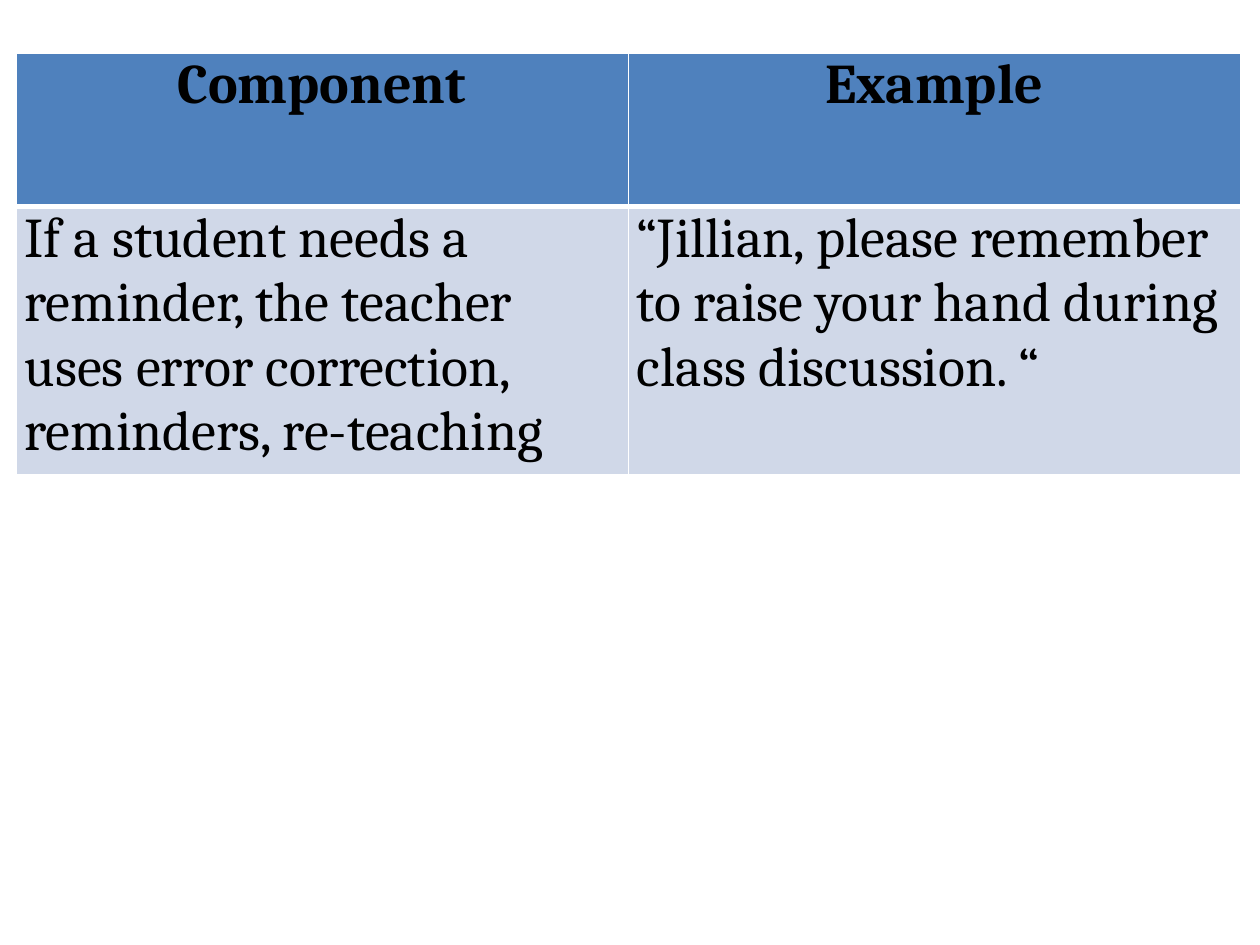
import dataclasses

import lxml.etree
import pptx
import pptx.dml.color
import pptx.enum.text
import pptx.oxml.ns
import pptx.table
import pptx.util

Pt = pptx.util.Pt
Align = pptx.enum.text.PP_ALIGN
SIDES = ("L", "R", "T", "B")
MARGINS = {
    "margin_left": Pt(5),
    "margin_right": Pt(5),
    "margin_top": Pt(0),
    "margin_bottom": Pt(0),
}


@dataclasses.dataclass(frozen=True)
class Row:
    texts: tuple[str, ...]
    height: float
    fill: str
    bold: bool
    align: Align
    edges: tuple[float, ...]  # widths in the order of SIDES


ROWS = (
    Row(("Component", "Example"), 87.6, "4F81BD", True, Align.CENTER, (1, 1, 1, 3)),
    Row(
        (
            "If a student needs a reminder, the teacher uses error correction, "
            "reminders, re-teaching",
            "“Jillian, please remember to raise your hand during class discussion. “",
        ),
        153.4, "D0D8E8", False, Align.LEFT, (1, 1, 1, 1),
    ),
)
WIDTH = 350


def color(code: str) -> pptx.dml.color.RGBColor:
    return pptx.dml.color.RGBColor.from_string(code)


def apply(target: object, values: dict) -> None:
    for name, value in values.items():
        setattr(target, name, value)


def add_edge(cell: pptx.table._Cell, side: str, width: float, code: str) -> None:
    qn = pptx.oxml.ns.qn
    props = cell._tc.get_or_add_tcPr()
    line = lxml.etree.SubElement(props, qn(f"a:ln{side}"), w=str(Pt(width)))
    fill = lxml.etree.SubElement(line, qn("a:solidFill"))
    lxml.etree.SubElement(fill, qn("a:srgbClr"), val=code)


def fill_cell(cell: pptx.table._Cell, text: str, row: Row) -> None:
    apply(cell, MARGINS)
    # The schema wants the edges ahead of the fill.
    for side, width in zip(SIDES, row.edges):
        add_edge(cell, side, width, "FFFFFF")
    cell.fill.solid()
    cell.fill.fore_color.rgb = color(row.fill)
    para = cell.text_frame.paragraphs[0]
    para.alignment = row.align
    run = para.add_run()
    run.text = text
    apply(run.font, {"name": "Cambria", "size": Pt(32), "bold": row.bold})
    run.font.color.rgb = color("000000")


def main() -> None:
    deck = pptx.Presentation()
    apply(deck, {"slide_width": Pt(720), "slide_height": Pt(540)})
    slide = deck.slides.add_slide(deck.slide_layouts[6])
    count = len(ROWS[0].texts)
    height = sum(row.height for row in ROWS)
    table = slide.shapes.add_table(
        len(ROWS), count, Pt(9), Pt(30.5), Pt(WIDTH * count), Pt(height)
    ).table
    for column in table.columns:
        column.width = Pt(WIDTH)
    for r, row in enumerate(ROWS):
        table.rows[r].height = Pt(row.height)
        for c, text in enumerate(row.texts):
            fill_cell(table.cell(r, c), text, row)
    deck.save("out.pptx")


if __name__ == "__main__":
    main()
